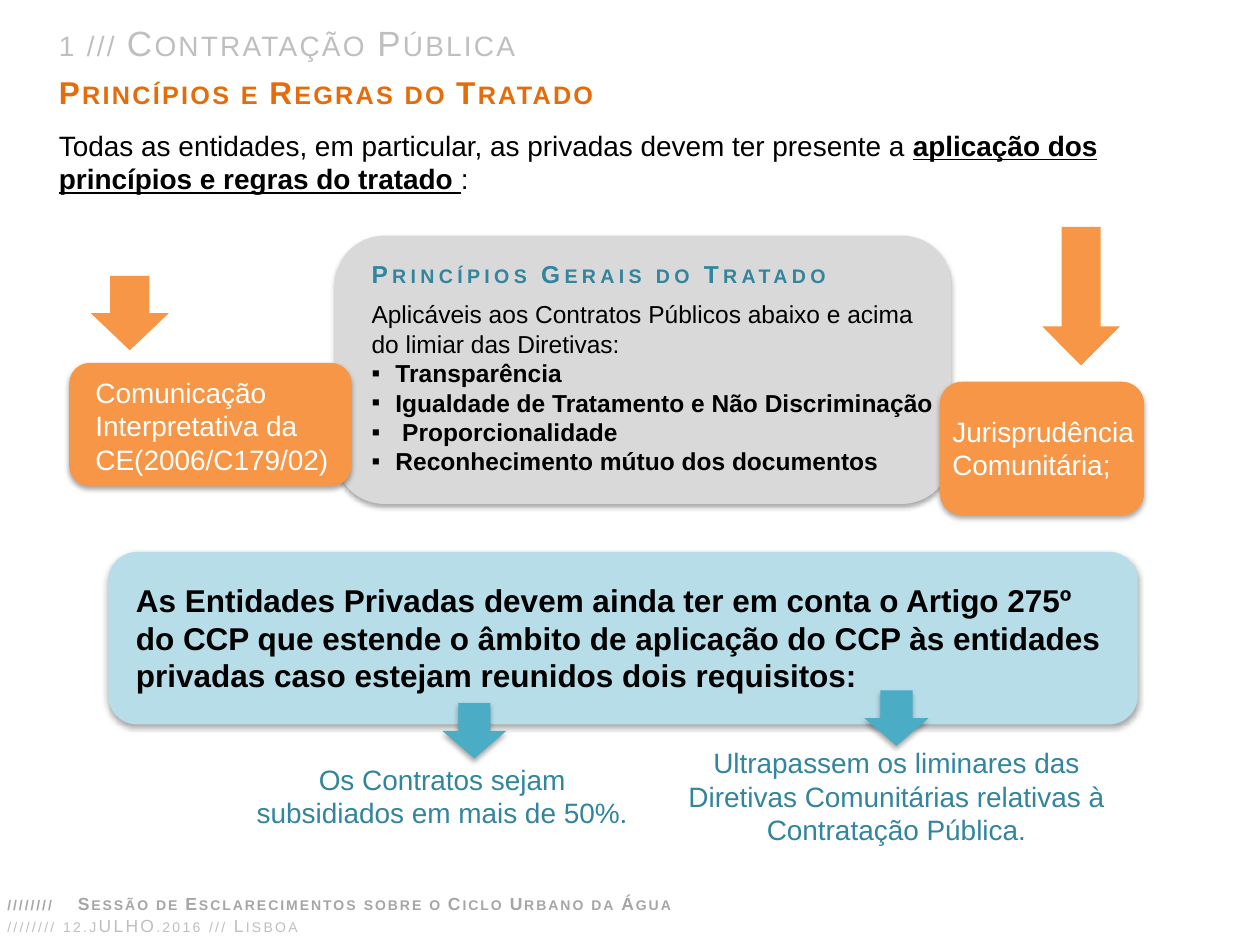
from lxml import etree
from pptx import Presentation
from pptx.dml.color import RGBColor
from pptx.enum.shapes import MSO_SHAPE as Preset
from pptx.enum.text import MSO_AUTO_SIZE as AutoSize, PP_ALIGN as Align
from pptx.oxml import parse_xml
from pptx.oxml.ns import nsdecls, qn
from pptx.util import Inches, Pt

COLORS = {
    "black": "000000",
    "white": "FFFFFF",
    "orange": "F79646",
    "dark_orange": "E46C0A",
    "teal": "4BACC6",
    "dark_teal": "31859C",
    "light_blue": "B7DEE8",
    "light_gray": "D9D9D9",
    "silver": "BFBFBF",
    "gray": "A6A6A6",
}

presentation = Presentation()
presentation.slide_width = Inches(10)
presentation.slide_height = Inches(7.5)
slide = presentation.slides.add_slide(presentation.slide_layouts[6])


def write(target, text, size=16, color="black", bold=False, underline=False,
          tracking=0, small_caps=False, align=Align.LEFT, after=0,
          bullet=None, tab=None, inline=False):
    if isinstance(target, tuple):
        frame = slide.shapes.add_textbox(*map(Inches, target)).text_frame
        frame.word_wrap = True
        frame.auto_size = AutoSize.SHAPE_TO_FIT_TEXT
    else:
        frame = target
    paragraph = frame.paragraphs[-1]
    if paragraph.runs and not inline:
        paragraph = frame.add_paragraph()
    paragraph.alignment = align
    paragraph.space_after = Pt(after)
    properties = paragraph._p.get_or_add_pPr()
    if bullet:
        properties.set("marL", str(Inches(0.19)))
        properties.set("indent", str(-Inches(0.19)))
        etree.SubElement(properties, qn("a:buFont"), typeface="Arial")
        etree.SubElement(properties, qn("a:buChar"), char=bullet)
    if tab:
        stops = etree.SubElement(properties, qn("a:tabLst"))
        etree.SubElement(stops, qn("a:tab"), pos=str(Inches(tab)), algn="l")
    run = paragraph.add_run()
    run.text = text
    font = run.font
    font.name = "Arial"
    font.size = Pt(size)
    font.bold = bold
    font.underline = underline
    font.color.rgb = RGBColor.from_string(COLORS[color])
    run_properties = run._r.get_or_add_rPr()
    if tracking:
        run_properties.set("spc", str(round(tracking * 100)))
    if small_caps:
        run_properties.set("cap", "small")
    return frame


def add_block(preset, place, color, shadow=True, corner=None):
    shape = slide.shapes.add_shape(preset, *map(Inches, place))
    shape.fill.solid()
    shape.fill.fore_color.rgb = RGBColor.from_string(COLORS[color])
    shape.line.fill.background()
    shape.shadow.inherit = False
    if corner:
        shape.adjustments[0] = corner
    if shadow:
        effects = shape._element.spPr.find(qn("a:effectLst"))
        effects.append(parse_xml(
            f'<a:outerShdw {nsdecls("a")} blurRad="{Pt(3.1)}" dist="{Pt(1.8)}" '
            'dir="5400000" rotWithShape="0"><a:srgbClr val="000000">'
            '<a:alpha val="35000"/></a:srgbClr></a:outerShdw>'))


write((0.37, 0.12, 9.63, 0.44), "1 /// Contratação Pública", size=20,
      color="silver", tracking=1.3, small_caps=True, after=6)
write((0.37, 0.53, 5.64, 0.4), "Princípios e Regras do Tratado", size=18,
      color="dark_orange", bold=True, tracking=1.3, small_caps=True, after=6)
intro = write((0.37, 0.97, 8.8, 0.64),
              "Todas as entidades, em particular, as privadas devem ter presente a ")
write(intro, "aplicação dos princípios e regras do tratado ",
      bold=True, underline=True, inline=True)
write(intro, ":", inline=True)

add_block(Preset.ROUNDED_RECTANGLE, (2.66, 1.87, 4.89, 2.13), "light_gray", corner=0.184)
principles = write((2.85, 2.01, 4.71, 1.83), "Princípios Gerais do Tratado", size=14,
                   color="dark_teal", bold=True, tracking=2.5, small_caps=True, after=6)
write(principles, "Aplicáveis aos Contratos Públicos abaixo e acima do limiar das Diretivas:",
      size=14)
for principle in ("Transparência", "Igualdade de Tratamento e Não Discriminação",
                  " Proporcionalidade", "Reconhecimento mútuo dos documentos"):
    write(principles, principle, size=14, bold=True, bullet="▪")

for arrow, block, label, source in (
    ((0.72, 2.19, 0.62, 0.59), (0.55, 2.88, 2.24, 0.98), (0.66, 2.93, 2.14, 0.91),
     "Comunicação Interpretativa da CE(2006/C179/02)"),
    ((8.27, 1.8, 0.62, 1.1), (7.46, 3.03, 1.62, 1.06), (7.46, 3.24, 1.82, 0.64),
     "Jurisprudência Comunitária;"),
):
    add_block(Preset.DOWN_ARROW, arrow, "orange", shadow=False)
    add_block(Preset.ROUNDED_RECTANGLE, block, "orange")
    write(label, source, color="white")

add_block(Preset.ROUNDED_RECTANGLE, (0.86, 4.38, 8.17, 1.37), "light_blue")
write((0.98, 4.56, 7.99, 1.01),
      "As Entidades Privadas devem ainda ter em conta o Artigo 275º do CCP que estende "
      "o âmbito de aplicação do CCP às entidades privadas caso estejam reunidos dois "
      "requisitos:", size=18, bold=True)

for arrow, label, requirement in (
    ((3.51, 5.58, 0.51, 0.44), (1.93, 6, 3.16, 0.64),
     "Os Contratos sejam subsidiados em mais de 50%."),
    ((6.86, 5.48, 0.51, 0.44), (5.36, 5.87, 3.51, 0.91),
     "Ultrapassem os liminares das Diretivas Comunitárias relativas à "
     "Contratação Pública."),
):
    add_block(Preset.DOWN_ARROW, arrow, "teal")
    write(label, requirement, color="dark_teal", align=Align.CENTER)

write((-0.04, 7.21, 7.74, 0.27), "//////// 12.jULHO.2016 /// Lisboa", size=10,
      color="silver", tracking=1.3, small_caps=True)
write((-0.04, 7.04, 7.74, 0.27),
      "////////\tSessão de Esclarecimentos sobre o Ciclo Urbano da Água", size=10,
      color="gray", bold=True, tracking=1.1, small_caps=True, tab=0.56)

presentation.save("out.pptx")
